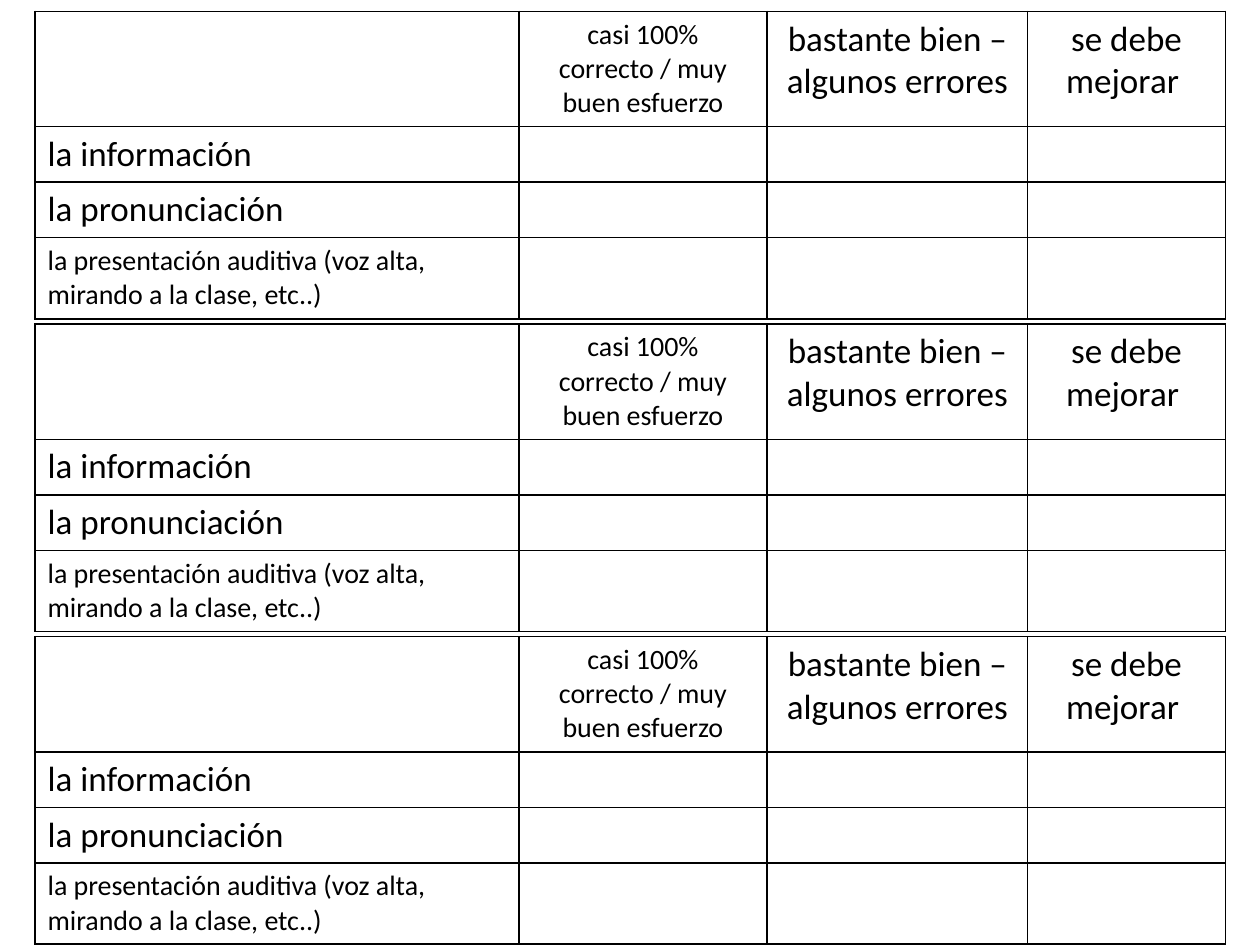
import lxml.etree
import pptx
import pptx.dml.color
import pptx.enum.text
import pptx.oxml
import pptx.oxml.ns
import pptx.util

Pt = pptx.util.Pt
CENTER = pptx.enum.text.PP_ALIGN.CENTER
LEFT = pptx.enum.text.PP_ALIGN.LEFT

BLACK = "000000"
COLUMN_WIDTHS = [276.5, 141.8, 149, 113]
ROW_HEIGHTS = [65.8, 31.6, 31.6, 46.3]
TABLE_PITCH = 178.6
HEADINGS = [
    ("", 20),
    ("casi 100% correcto / muy buen esfuerzo", 16),
    ("bastante bien –algunos errores", 20),
    ("se debe mejorar ", 20),
]
CRITERIA = [
    ("la información", 20),
    ("la pronunciación", 20),
    ("la presentación auditiva (voz alta, mirando a la clase, etc..)", 16),
]


def color(value):
    return pptx.dml.color.RGBColor.from_string(value)


def write_text(text_frame, text, size=20, align=LEFT, font="Calibri", fill=BLACK):
    paragraph = text_frame.paragraphs[0]
    paragraph.alignment = align
    run = paragraph.add_run()
    run.text = text
    run.font.size = Pt(size)
    run.font.name = font
    run.font.color.rgb = color(fill)


def add_borders(cell, width=1, stroke=BLACK):
    properties = cell._tc.get_or_add_tcPr()
    for index, side in enumerate(("a:lnL", "a:lnR", "a:lnT", "a:lnB")):
        line = pptx.oxml.parse_xml(
            f'<{side} {pptx.oxml.ns.nsdecls("a")} w="{Pt(width)}">'
            f'<a:solidFill><a:srgbClr val="{stroke}"/></a:solidFill></{side}>'
        )
        properties.insert(index, line)


def add_rubric(slide, left, top):
    frame = slide.shapes.add_table(
        len(ROW_HEIGHTS), len(COLUMN_WIDTHS), Pt(left), Pt(top),
        Pt(sum(COLUMN_WIDTHS)), Pt(sum(ROW_HEIGHTS)),
    )
    table = frame.table
    table.first_row = False
    table.horz_banding = False
    for column, width in zip(table.columns, COLUMN_WIDTHS):
        column.width = Pt(width)
    for row, height in zip(table.rows, ROW_HEIGHTS):
        row.height = Pt(height)
    for cell in table.iter_cells():
        cell.fill.background()
        add_borders(cell)
    for index, (text, size) in enumerate(HEADINGS):
        if text:
            write_text(table.cell(0, index).text_frame, text, size=size, align=CENTER)
    for index, (text, size) in enumerate(CRITERIA, start=1):
        write_text(table.cell(index, 0).text_frame, text, size=size)


def main():
    presentation = pptx.Presentation()
    presentation.slide_width = Pt(720)
    presentation.slide_height = Pt(540)
    slide = presentation.slides.add_slide(presentation.slide_layouts[6])
    for index in range(3):
        add_rubric(slide, left=20, top=6.5 + index * TABLE_PITCH)
    presentation.save("out.pptx")


if __name__ == "__main__":
    main()
